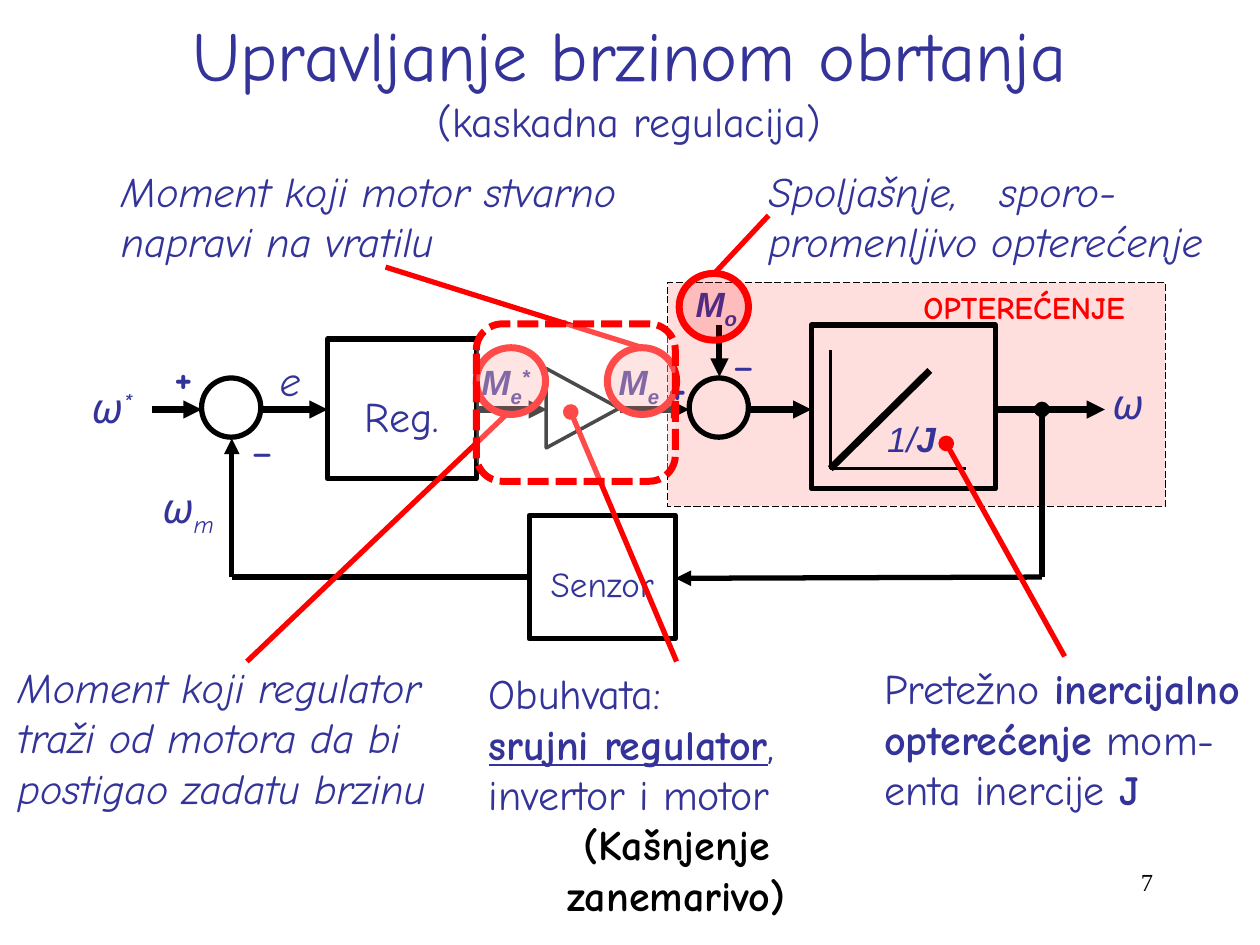
from lxml import etree
from pptx import Presentation
from pptx.dml.color import RGBColor
from pptx.enum.dml import MSO_LINE
from pptx.enum.shapes import MSO_CONNECTOR, MSO_SHAPE
from pptx.enum.text import MSO_ANCHOR, PP_ALIGN
from pptx.oxml.ns import qn
from pptx.util import Inches, Pt

NAVY, BLACK, RED, WHITE = "333399", "000000", "FF0000", "FFFFFF"
FONT = "Comic Neue"


def color(value):
    return RGBColor.from_string(value)


def style_run(r, size, style="", fill=NAVY, font=FONT, base=0):
    """Style letters: b bold, i italic, u underline; base is a percentage."""
    f = r.font
    f.name, f.size = font, Pt(size)
    f.bold, f.italic, f.underline = ("b" in style, "i" in style, "u" in style)
    f.color.rgb = color(fill)
    if base:
        r._r.get_or_add_rPr().set("baseline", str(base * 1000))


def add_runs(p, runs, size, **defaults):
    """Each run is its text and a dict of what differs from the defaults."""
    for text, changes in runs:
        r = p.add_run()
        r.text = text
        style_run(r, size, **{**defaults, **changes})


def add_text(s, x, y, w, h, runs, size=24, inset=True, wrap=True, **defaults):
    tb = s.shapes.add_textbox(Inches(x), Inches(y), Inches(w), Inches(h))
    tf = tb.text_frame
    tf.word_wrap = wrap
    if not inset:
        tf.margin_left = tf.margin_right = tf.margin_top = tf.margin_bottom = 0
    if isinstance(runs, str):
        runs = [(runs, {})]
    add_runs(tf.paragraphs[0], runs, size, **defaults)
    return tf


def add_box(s, kind, x, y, w, h, line=BLACK, width=3, fill=None, alpha=100):
    sp = s.shapes.add_shape(kind, Inches(x), Inches(y), Inches(w), Inches(h))
    sp.shadow.inherit = False
    sp.line.color.rgb = color(line)
    sp.line.width = Pt(width)
    if fill is None:
        sp.fill.background()
    else:
        sp.fill.solid()
        sp.fill.fore_color.rgb = color(fill)
        if alpha < 100:
            clr = sp.fill._xPr.find(qn("a:solidFill"))[0]
            etree.SubElement(clr, qn("a:alpha")).set("val", str(alpha * 1000))
    return sp


def add_line(s, x1, y1, x2, y2, width=3, line=BLACK, head=None, tail=None):
    c = s.shapes.add_connector(MSO_CONNECTOR.STRAIGHT, Inches(x1), Inches(y1),
                               Inches(x2), Inches(y2))
    c.line.color.rgb = color(line)
    c.line.width = Pt(width)
    ln = c.line._get_or_add_ln()
    for tag, end in (("a:headEnd", head), ("a:tailEnd", tail)):
        if end:
            etree.SubElement(ln, qn(tag)).set("type", end)
    etree.SubElement(c._element.spPr, qn("a:effectLst"))


def add_block(s, x, y, w, h, label, size):
    sp = add_box(s, MSO_SHAPE.RECTANGLE, x, y, w, h)
    tf = sp.text_frame
    tf.vertical_anchor = MSO_ANCHOR.MIDDLE
    tf.margin_top = Inches(0.1)
    tf.margin_bottom = 0
    p = tf.paragraphs[0]
    p.alignment = PP_ALIGN.CENTER
    add_runs(p, [(label, {})], size)


def add_title(s, x, y, w, h):
    title = s.shapes.title
    title.left, title.top = Inches(x), Inches(y)
    title.width, title.height = Inches(w), Inches(h)
    tf = title.text_frame
    tf.text = "Upravljanje brzinom obrtanja\v(kaskadna regulacija)"
    tf.vertical_anchor = MSO_ANCHOR.MIDDLE
    p = tf.paragraphs[0]
    p.alignment = PP_ALIGN.CENTER
    for r, size in zip(p.runs, (40, 24)):
        style_run(r, size)


def add_load_area(s, x, y, w, h):
    add_text(s, x + 1.93, y, 2.02, 0.4, "OPTEREĆENJE", 18, wrap=False,
             style="b", fill=RED)
    area = add_box(s, MSO_SHAPE.RECTANGLE, x, y, w, h, width=0.5, fill=RED, alpha=13)
    area.line.dash_style = MSO_LINE.LONG_DASH


def add_integrator(s, x, y, w, h):
    left, bottom = x + 0.15, y + h - 0.16
    add_text(s, x + 0.6, y + 0.73, 0.68, 0.34, [("1/", {}), ("J", {"style": "bi"})],
             20, inset=False, style="i", font="Arial")
    add_box(s, MSO_SHAPE.RECTANGLE, x, y, w, h)
    add_line(s, left, y + 0.2, left, bottom, 2)
    add_line(s, left, bottom, left + 1.08, bottom, 2)
    add_line(s, left, bottom, left + 0.79, y + 0.36, 4)


def add_signals(s, x, y):
    """Signal names and signs, from the left end of the main axis."""
    sub, sup = {"base": -25}, {"base": 30}
    for dx, dy, w, runs in (
        (0, -0.22, 0.47, [("ω", {}), ("*", sup)]),
        (0.56, 0.57, 0.63, [("ω", {}), ("m", sub)]),
        (8.1, -0.25, 0.29, "ω"),
        (1.49, -0.44, 0.25, "e"),
    ):
        add_text(s, x + dx, y + dy, w, 0.4, runs, inset=False, style="i")
    for dx, dy, runs in (
        (3.09, -0.39, [("M", {}), ("e", sub), ("*", sup)]),
        (4.18, -0.39, [("M", {}), ("e", sub)]),
        (4.79, -1.01, [("M", {}), ("o", sub)]),
    ):
        add_text(s, x + dx, y + dy, 0.51, 0.34, runs, 20, inset=False,
                 style="bi", font="Arial")
    for dx, dy, sign, size in ((0.56, -0.52, "+", 24), (4.48, -0.43, "+", 24),
                               (1.19, 0.07, "_", 18), (5.01, -0.62, "_", 18)):
        add_text(s, x + dx, y + dy, 0.31, 0.4, sign, size, style="b")


def add_control_loop(s, x, y):
    """Speed loop; x is its left end and y its main axis."""
    feedback = y + 1.33
    add_block(s, x + 1.87, y - 0.56, 1.18, 1.11, "Reg.", 24)
    add_block(s, x + 3.47, y + 0.84, 1.16, 0.98, "Senzor", 20)
    for start, end in ((0.48, 0.87), (1.35, 1.87), (3.05, 3.61),
                       (4.19, 4.74), (5.21, 5.71), (7.17, 8.04)):
        add_line(s, x + start, y, x + end, y, 3.5, tail="triangle")
    for dx in (0.87, 4.74):
        add_box(s, MSO_SHAPE.OVAL, x + dx, y - 0.25, 0.47, 0.47)
    add_line(s, x + 4.98, y - 0.67, x + 4.98, y - 0.26, 3.5, tail="triangle")
    add_line(s, x + 7.54, y, x + 7.54, feedback, head="oval")
    add_line(s, x + 7.54, feedback, x + 4.63, feedback + 0.01, tail="triangle")
    add_line(s, x + 3.47, feedback, x + 1.11, feedback)
    add_line(s, x + 1.11, feedback, x + 1.11, y + 0.23, tail="triangle")
    amplifier = add_box(s, MSO_SHAPE.ISOSCELES_TRIANGLE, x + 3.58, y - 0.3, 0.63,
                        0.58, width=2, fill=WHITE)
    amplifier.rotation = 90
    add_integrator(s, x + 5.71, y - 0.67, 1.46, 1.3)
    add_signals(s, x, y)


def add_circled_note(s, x, y, w, h, text, circle, leader):
    """Note joined by a leader to the ring around a signal."""
    add_text(s, x, y, w, h, text, inset=False, style="i")
    add_box(s, MSO_SHAPE.OVAL, *circle, 0.55, 0.53, line=RED, width=4,
            fill=RED, alpha=15)
    add_line(s, *leader, line=RED)


def add_dotted_note(s, x, y, w, h, runs, leader):
    """Note joined by a leader that starts with a dot."""
    add_line(s, *leader, line=RED, head="oval")
    return add_text(s, x, y, w, h, runs)


def add_notes(s):
    add_circled_note(s, 6.1, 1.31, 3.87, 0.81,
                     "Spoljašnje,   sporo-promenljivo opterećenje",
                     (5.39, 2.17), (5.67, 2.17, 6.1, 1.71))
    add_circled_note(s, 0.96, 1.31, 4.19, 0.81,
                     "Moment koji motor stvarno napravi na vratilu",
                     (4.82, 2.76), (5.1, 2.76, 3.06, 2.12))
    add_circled_note(s, 0.14, 5.25, 3.65, 1.21,
                     "Moment koji regulator traži od motora da bi postigao zadatu brzinu",
                     (3.78, 2.76), (4.04, 3.27, 1.96, 5.25))
    tf = add_dotted_note(s, 3.78, 5.25, 3.18, 2.12, "Obuhvata:",
                         (4.53, 3.27, 5.37, 5.25))
    add_runs(tf.add_paragraph(), [("srujni regulator", {"style": "bu"}),
                                  (", invertor i motor", {})], 24)
    p = tf.add_paragraph()
    p.alignment = PP_ALIGN.CENTER
    add_runs(p, [("(Kašnjenje zanemarivo)", {})], 24, style="b", fill=BLACK)
    bold = {"style": "b"}
    add_dotted_note(s, 6.92, 5.21, 3.07, 1.72,
                    [("Pretežno ", {}), ("inercijalno opterećenje", bold),
                     (" mom-enta inercije ", {}), ("J", bold)],
                    (7.51, 3.52, 8.45, 5.21))


def main():
    prs = Presentation()
    prs.slide_width, prs.slide_height = Inches(10), Inches(7.5)
    s = prs.slides.add_slide(prs.slide_layouts[5])
    add_title(s, 0.15, 0, 9.69, 1.25)
    add_load_area(s, 5.3, 2.24, 3.95, 1.78)
    add_control_loop(s, 0.73, 3.25)
    add_notes(s)
    drive = add_box(s, MSO_SHAPE.ROUNDED_RECTANGLE, 3.78, 2.57, 1.58, 1.25,
                    line=RED, width=4, fill=WHITE, alpha=29)
    drive.line.dash_style = MSO_LINE.SQUARE_DOT
    tf = add_text(s, 7.17, 6.83, 2.08, 0.5, "7", 14, fill=BLACK,
                  font="Times New Roman")
    tf.paragraphs[0].alignment = PP_ALIGN.RIGHT
    prs.save("out.pptx")


if __name__ == "__main__":
    main()
